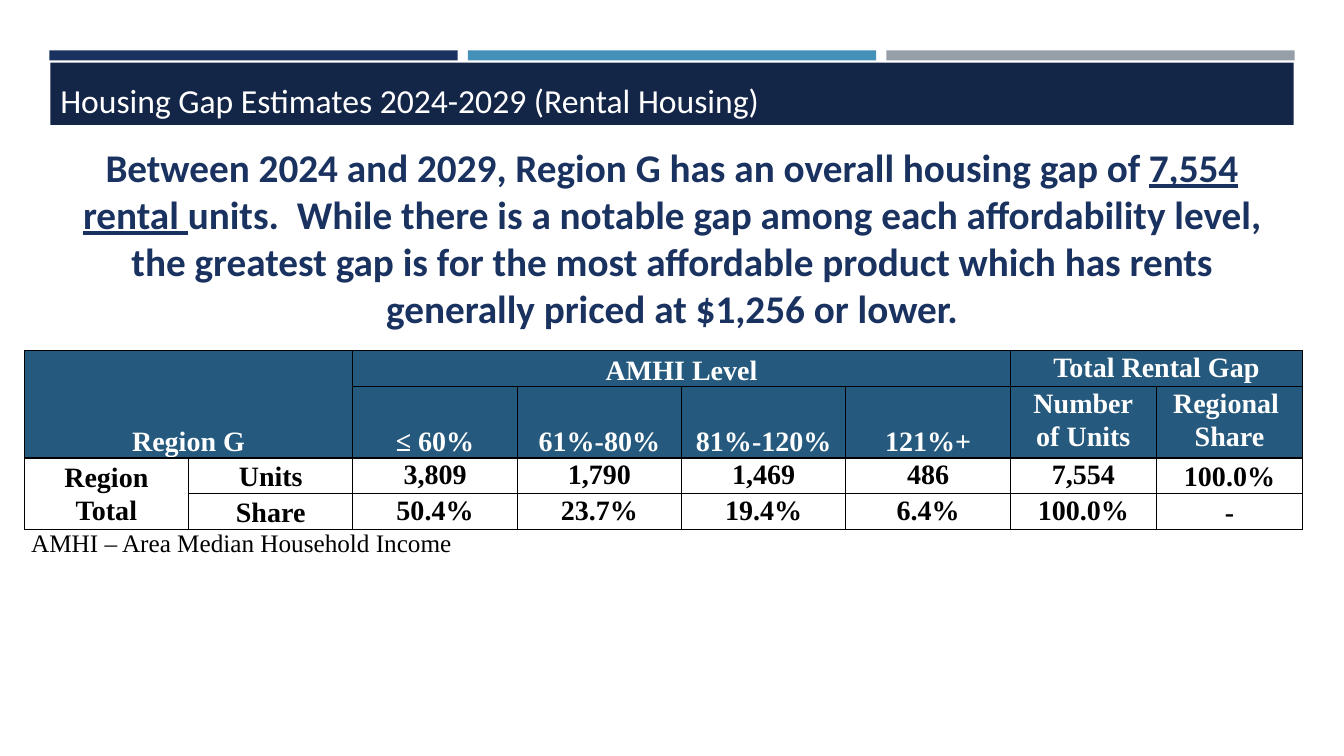
"""Build the rental housing gap slide."""
from lxml.etree import SubElement
from pptx import Presentation
from pptx.dml.color import RGBColor
from pptx.enum.shapes import MSO_SHAPE
from pptx.enum.text import MSO_ANCHOR, PP_ALIGN
from pptx.oxml.ns import qn
from pptx.util import Pt

PX = 9144
COLORS = {"navy": "1A3260", "gray": "969FA7", "blue": "4590B8", "title": "142648",
          "head": "25597D", "white": "FFFFFF", "black": "000000"}


def style(para, size, face, color, bold=False):
    for run in para.runs:
        run.font.size = Pt(size)
        run.font.name = face
        run.font.bold = bold
        run.font.color.rgb = RGBColor.from_string(COLORS[color])


def add_bar(left, top, width, height, color):
    bar = slide.shapes.add_shape(MSO_SHAPE.RECTANGLE, left * PX, top * PX, width * PX, height * PX)
    bar.shadow.inherit = False
    bar.fill.solid()
    bar.fill.fore_color.rgb = RGBColor.from_string(COLORS[color])
    bar.line.fill.background()
    return bar


deck = Presentation()
deck.slide_width, deck.slide_height = 1333 * PX, 750 * PX
slide = deck.slides.add_slide(deck.slide_layouts[6])

for i, color in enumerate(["navy", "blue", "gray"]):
    add_bar(49 + 415 * i, 50, 405, 10, color)

title = add_bar(50, 62, 1233, 62, "title").text_frame
title.text = "Housing Gap Estimates 2024-2029 (Rental Housing)"
title.vertical_anchor = MSO_ANCHOR.BOTTOM
para = title.paragraphs[0]
para.alignment = PP_ALIGN.LEFT
para.line_spacing = 0.85
style(para, 24, "Calibri", "white")

body = slide.shapes.add_textbox(65 * PX, 137 * PX, 1203 * PX, 199 * PX).text_frame
body.word_wrap = True
para = body.paragraphs[0]
para.alignment = PP_ALIGN.CENTER
for text, under in [
    ("Between 2024 and 2029, Region G has an overall housing gap of ", False),
    ("7,554 rental ", True),
    ("units.  While there is a notable gap among each affordability level, the greatest gap "
     "is for the most affordable product which has rents generally priced at $1,256 or lower.", False),
]:
    run = para.add_run()
    run.text = text
    run.font.underline = under
style(para, 28, "Calibri", "navy", True)

ROWS = [
    ["Region G", "", "AMHI Level", "", "", "", "Total Rental Gap", ""],
    ["", "", "≤ 60%", "61%-80%", "81%-120%", "121%+", "Number\nof Units", "Regional \nShare"],
    ["Region\nTotal", "Units", "3,809", "1,790", "1,469", "486", "7,554", "100.0%"],
    ["", "Share", "50.4%", "23.7%", "19.4%", "6.4%", "100.0%", "-"],
]
WIDTHS = [163] * 6 + [145] * 2
HEIGHTS = [35, 71, 35, 36]
grid = slide.shapes.add_table(4, 8, 24 * PX, 348 * PX, sum(WIDTHS) * PX, sum(HEIGHTS) * PX).table
grid.first_row = grid.horz_banding = False
for col, width in zip(grid.columns, WIDTHS):
    col.width = width * PX
for row, height in zip(grid.rows, HEIGHTS):
    row.height = height * PX

for r, row in enumerate(ROWS):
    for c, text in enumerate(row):
        cell = grid.cell(r, c)
        head = r < 2
        cell.margin_left = cell.margin_right = 7 * PX
        cell.margin_top = cell.margin_bottom = 0
        if head and c < 6:
            cell.vertical_anchor = MSO_ANCHOR.BOTTOM
        elif not head and c in (0, 1, 7):
            cell.vertical_anchor = MSO_ANCHOR.MIDDLE
        else:
            cell.vertical_anchor = MSO_ANCHOR.TOP
        props = cell._tc.get_or_add_tcPr()
        for side in ("lnL", "lnR", "lnT", "lnB"):
            edge = SubElement(props, qn("a:" + side), w=str(Pt(1)))
            paint = SubElement(edge, qn("a:solidFill"))
            SubElement(paint, qn("a:srgbClr"), val=COLORS["black"])
        if head:
            cell.fill.solid()
            cell.fill.fore_color.rgb = RGBColor.from_string(COLORS["head"])
        else:
            cell.fill.background()
        cell.text_frame.text = text
        for para in cell.text_frame.paragraphs:
            para.alignment = PP_ALIGN.CENTER
            para.line_spacing = 1.06
            para.font.size = Pt(20)
            style(para, 20, "Times New Roman", "white" if head else "black", True)

for top, left, low, right in [(0, 0, 1, 1), (0, 2, 0, 5), (0, 6, 0, 7), (2, 0, 3, 0)]:
    grid.cell(top, left).merge(grid.cell(low, right))

note = slide.shapes.add_textbox(15 * PX, 518 * PX, 642 * PX, 40 * PX).text_frame
note.word_wrap = True
note.text = "AMHI – Area Median Household Income"
para = note.paragraphs[0]
para.alignment = PP_ALIGN.JUSTIFY
para._p.get_or_add_pPr().set("marL", str(6 * PX))
style(para, 18, "Times New Roman", "black")

deck.save("out.pptx")
